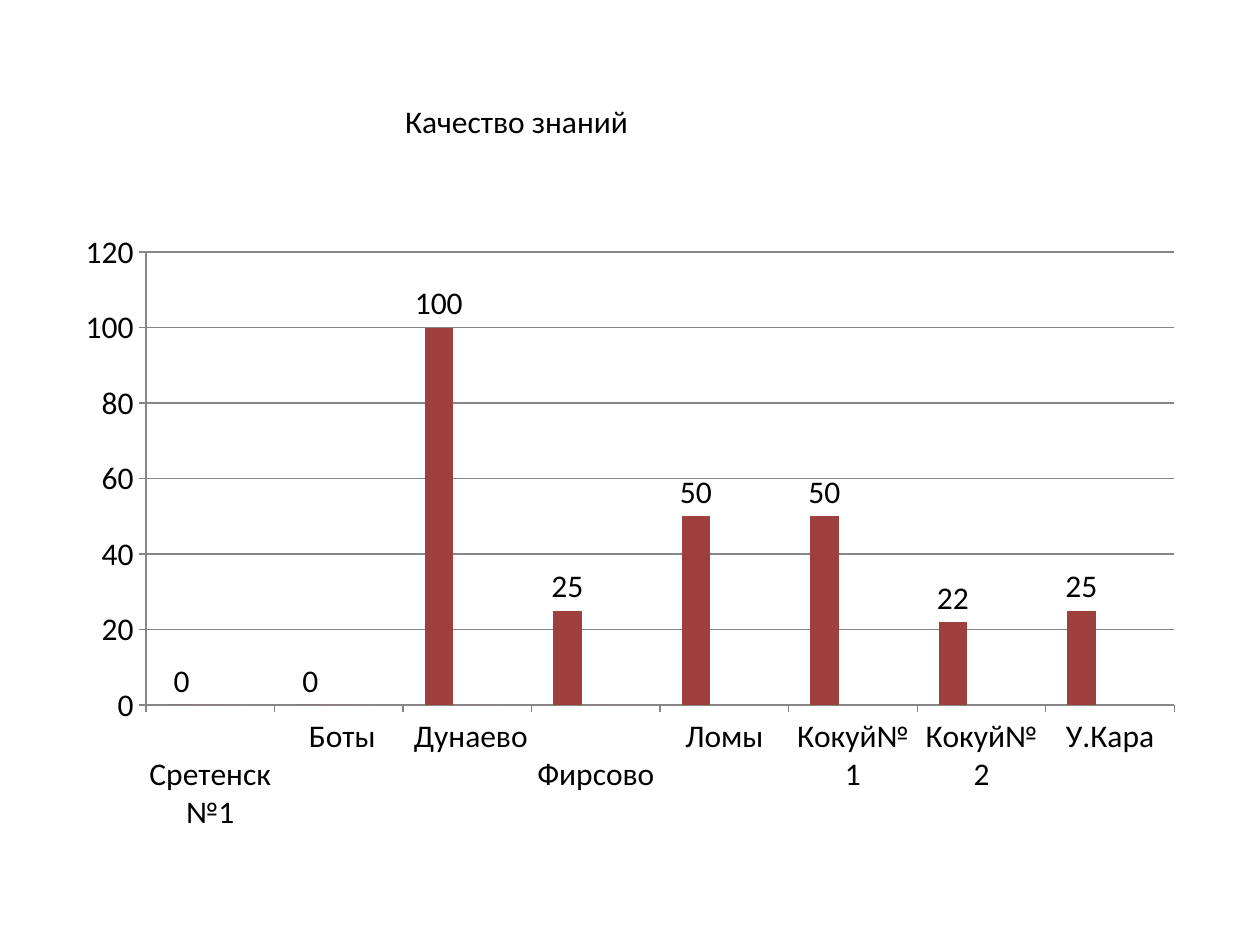
import pptx
import pptx.chart.data
import pptx.dml.color
import pptx.enum.chart
import pptx.enum.text
import pptx.util

Pt = pptx.util.Pt


def color(hex_value):
    return pptx.dml.color.RGBColor.from_string(hex_value)


class SlideBuilder:
    font_name = "Calibri"
    font_size = 18
    text_color = "000000"
    line_color = "868686"

    def __init__(self, slide):
        self.slide = slide

    def style_font(self, font):
        font.name = self.font_name
        font.size = Pt(self.font_size)
        font.bold = False
        font.color.rgb = color(self.text_color)

    def style_line(self, line):
        line.color.rgb = color(self.line_color)
        line.width = Pt(0.75)

    def add_title(self, text, left, top, width, height):
        title = self.slide.shapes.add_textbox(Pt(left), Pt(top), Pt(width), Pt(height))
        frame = title.text_frame
        frame.word_wrap = True
        frame.auto_size = pptx.enum.text.MSO_AUTO_SIZE.SHAPE_TO_FIT_TEXT
        frame.text = text
        paragraph = frame.paragraphs[0]
        paragraph.alignment = pptx.enum.text.PP_ALIGN.CENTER
        self.style_font(paragraph.runs[0].font)

    def add_column_chart(self, categories, series, left, top, width, height):
        data = pptx.chart.data.CategoryChartData()
        data.categories = categories
        for name, values, _ in series:
            data.add_series(name, values)
        chart = self.slide.shapes.add_chart(
            pptx.enum.chart.XL_CHART_TYPE.COLUMN_CLUSTERED,
            Pt(left), Pt(top), Pt(width), Pt(height), data,
        ).chart
        chart.has_title = False
        chart.has_legend = False
        self.style_font(chart.font)

        plot = chart.plots[0]
        plot.gap_width = 150
        plot.vary_by_categories = False
        for columns, (_, _, fill) in zip(plot.series, series):
            columns.invert_if_negative = False
            columns.format.fill.solid()
            columns.format.fill.fore_color.rgb = color(fill)

        labels = plot.series[0].data_labels
        labels.show_value = True
        labels.position = pptx.enum.chart.XL_LABEL_POSITION.OUTSIDE_END
        self.style_font(labels.font)

        for axis in (chart.category_axis, chart.value_axis):
            axis.major_tick_mark = pptx.enum.chart.XL_TICK_MARK.OUTSIDE
            axis.minor_tick_mark = pptx.enum.chart.XL_TICK_MARK.NONE
            self.style_line(axis.format.line)
            self.style_font(axis.tick_labels.font)
        chart.value_axis.minimum_scale = 0
        chart.value_axis.maximum_scale = 120
        chart.value_axis.major_unit = 20
        chart.value_axis.has_major_gridlines = True
        self.style_line(chart.value_axis.major_gridlines.format.line)


def main():
    presentation = pptx.Presentation()
    presentation.slide_width = Pt(720)
    presentation.slide_height = Pt(540)
    builder = SlideBuilder(presentation.slides.add_slide(presentation.slide_layouts[6]))

    schools = [" Сретенск№1", " Боты", " Дунаево", " Фирсово",
               "Ломы", "Кокуй№1", "Кокуй№2", "У.Кара"]
    no_results = [0] * 4 + [None] * 4
    quality_series = [
        ("Series 1", [0, 0, 100, 25, 50, 50, 22, 25], "9E413E"),
        ("Series 2", no_results, "C0504D"),
        ("Series 3", no_results, "D99694"),
    ]
    builder.add_column_chart(schools, quality_series, 36, 126, 648, 356.4)
    builder.add_title("Качество знаний", 150.5, 54.7, 289.4, 29)
    presentation.save("out.pptx")


if __name__ == "__main__":
    main()
